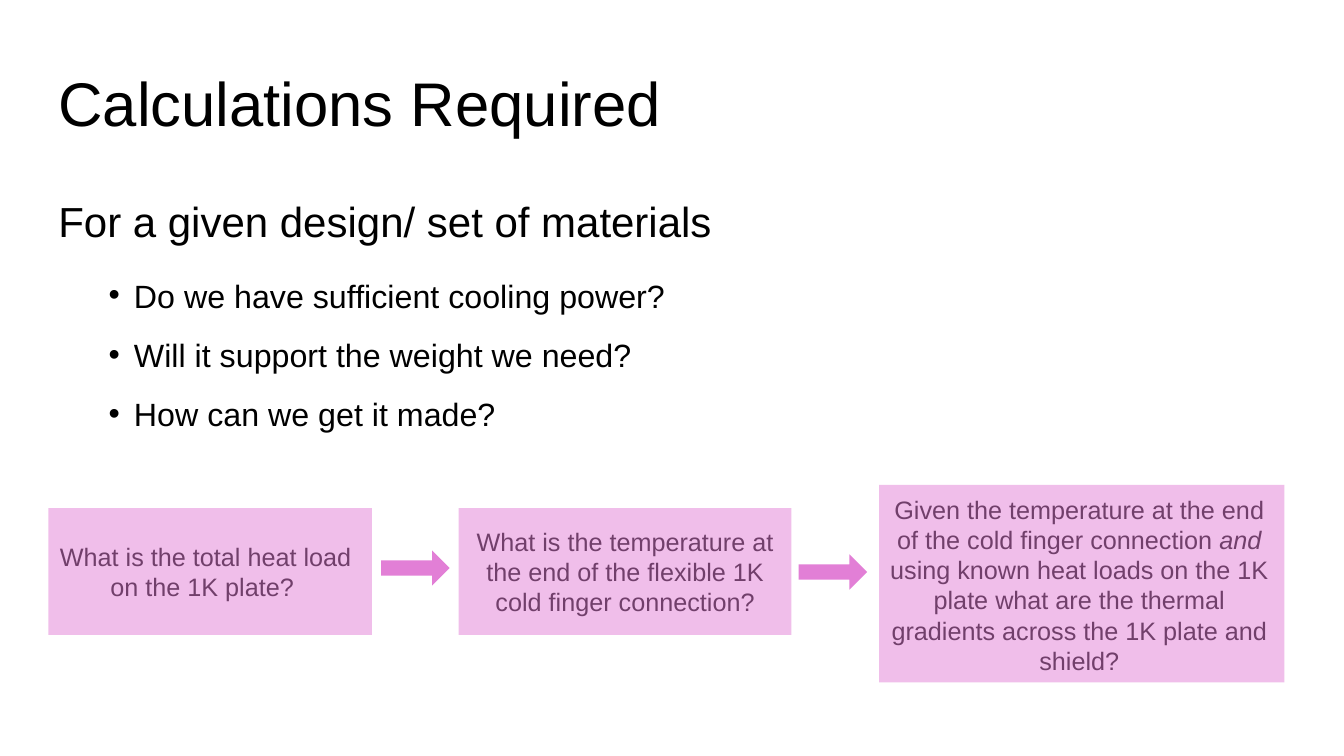
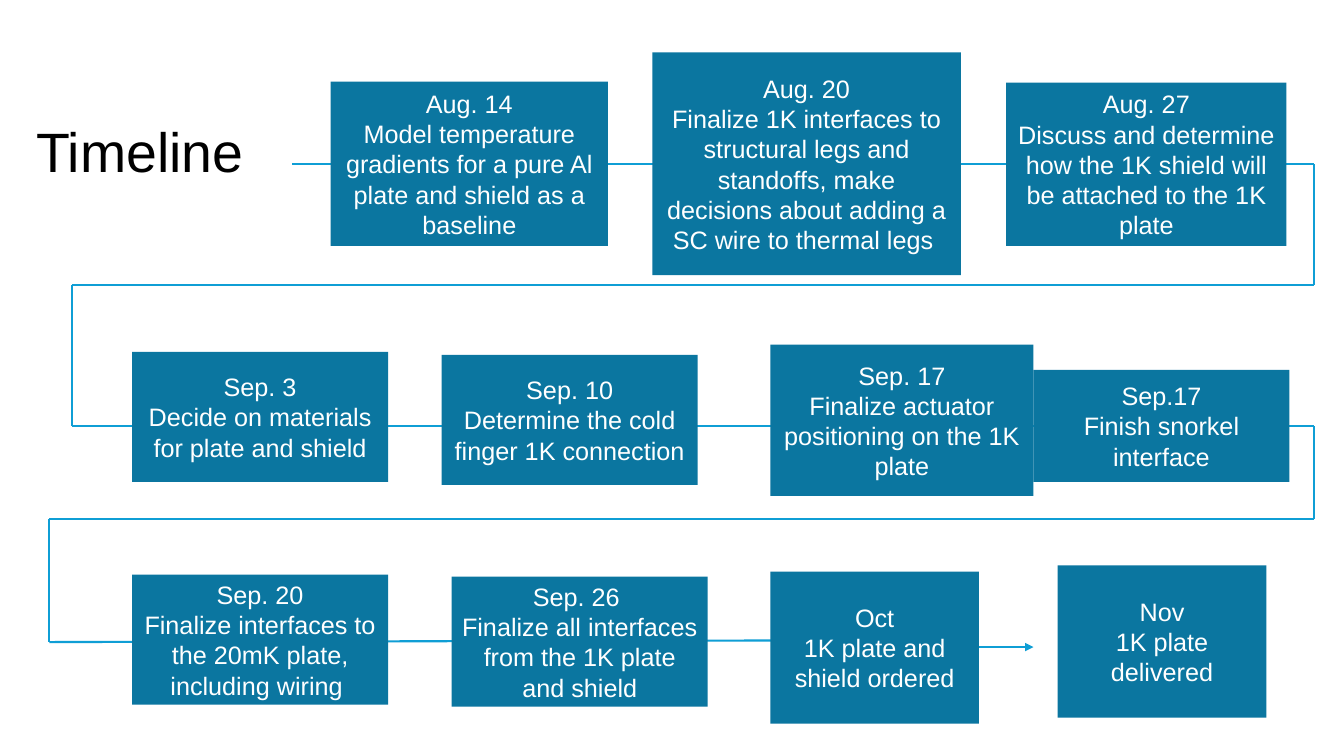
from dataclasses import dataclass
from itertools import pairwise

from lxml.etree import SubElement
from pptx import Presentation
from pptx.dml.color import RGBColor
from pptx.enum.shapes import MSO_CONNECTOR as Connector, MSO_SHAPE as Shape
from pptx.enum.text import MSO_ANCHOR as Anchor, PP_ALIGN as Align
from pptx.oxml.ns import qn
from pptx.util import Inches, Pt

FONT = "Arial"
BLACK, WHITE = "000000", "FFFFFF"
PINK, TEAL, SKY = "E27FD6", "0B76A0", "0F9ED5"
TEXT_SIZE = 18


@dataclass(frozen=True)
class Box:
    left: float
    top: float
    width: float
    height: float

    def lengths(self) -> list:
        return [Inches(n) for n in (self.left, self.top, self.width, self.height)]


@dataclass(frozen=True)
class Question:
    panel: Box
    text_box: Box
    spans: tuple[str, ...]  # every second span is italic


@dataclass(frozen=True)
class Milestone:
    box: Box
    date: str
    task: str


QUESTIONS = (
    Question(Box(0.48, 5.04, 3.21, 1.26), Box(0.39, 5.32, 3.3, 0.71),
             ("What is the total heat load on the 1K plate? ",)),
    Question(Box(4.55, 5.04, 3.3, 1.26), Box(4.55, 5.17, 3.3, 1.01),
             ("What is the temperature at the end of the flexible 1K "
              "cold finger connection?",)),
    Question(Box(8.72, 4.81, 4.02, 1.96), Box(8.72, 4.85, 3.97, 1.92),
             ("Given the temperature at the end of the cold finger connection ",
              "and",
              " using known heat loads on the 1K plate what are the thermal "
              "gradients across the 1K plate and shield?")),
)
ARROWS = (Box(3.78, 5.46, 0.68, 0.35), Box(7.92, 5.5, 0.68, 0.35))

BULLETS = (
    "Do we have sufficient cooling power?",
    "Will it support the weight we need?",
    "How can we get it made?",
)

MILESTONES = (
    Milestone(Box(3.28, 0.81, 2.75, 1.63), "Aug. 14",
              "Model temperature gradients for a pure Al plate and shield as a baseline"),
    Milestone(Box(6.47, 0.52, 3.06, 2.21), "Aug. 20",
              "Finalize 1K interfaces to structural legs and standoffs, make "
              "decisions about adding a SC wire to thermal legs "),
    Milestone(Box(9.98, 0.82, 2.78, 1.62), "Aug. 27",
              "Discuss and determine how the 1K shield will be attached to the 1K plate"),
    Milestone(Box(1.31, 3.49, 2.54, 1.29), "Sep. 3",
              "Decide on materials for plate and shield"),
    Milestone(Box(4.38, 3.52, 2.54, 1.29), "Sep. 10",
              "Determine the cold finger 1K connection"),
    Milestone(Box(7.64, 3.42, 2.61, 1.5), "Sep. 17",
              "Finalize actuator positioning on the 1K plate"),
    Milestone(Box(10.25, 3.67, 2.54, 1.11), "Sep.17", "Finish snorkel interface"),
    Milestone(Box(1.31, 5.7, 2.54, 1.29), "Sep. 20",
              "Finalize interfaces to the 20mK plate, including wiring "),
    Milestone(Box(4.48, 5.72, 2.54, 1.29), "Sep. 26 ",
              "Finalize all interfaces from the 1K plate and shield"),
    Milestone(Box(7.64, 5.67, 2.07, 1.51), "Oct", "1K plate and shield ordered"),
    Milestone(Box(10.49, 5.61, 2.07, 1.51), "Nov", "1K plate delivered"),
)
ROUTE = (
    (2.9, 1.63), (13.03, 1.63), (13.03, 2.83), (0.71, 2.83), (0.71, 4.23),
    (13.03, 4.23), (13.03, 5.15), (0.49, 5.15), (0.49, 6.37), (9.53, 6.35),
)
DELIVERY = ((9.71, 6.42), (10.25, 6.42))


def rgb(color: str) -> RGBColor:
    return RGBColor.from_string(color)


def set_values(target, values: dict) -> None:
    for name, value in values.items():
        setattr(target, name, value)


def add_span(para, text: str, size: float = TEXT_SIZE, color: str = BLACK, **font) -> None:
    span = para.add_run()
    span.text = text
    set_values(span.font, {"name": FONT, "size": Pt(size), **font})
    span.font.color.rgb = rgb(color)


def add_text_box(page, box: Box, **frame_values):
    """Add a wrapping text box and return its text frame."""
    frame = page.shapes.add_textbox(*box.lengths()).text_frame
    set_values(frame, {"word_wrap": True, **frame_values})
    return frame


def add_title(page, box: Box, text: str, size: float) -> None:
    para = add_text_box(page, box, vertical_anchor=Anchor.MIDDLE).paragraphs[0]
    para.line_spacing = 0.9
    add_span(para, text, size)


def add_block(page, kind: Shape, box: Box, color: str):
    """Add a flat filled shape without outline."""
    block = page.shapes.add_shape(kind, *box.lengths())
    block.shadow.inherit = False
    block.fill.solid()
    block.fill.fore_color.rgb = rgb(color)
    block.line.fill.background()
    return block


def set_opacity(block, percent: int) -> None:
    color = block._element.spPr.find(qn("a:solidFill"))[0]
    SubElement(color, qn("a:alpha"), val=str(percent * 1000))


def add_line(page, start: tuple[float, float], end: tuple[float, float],
             arrow: bool = False) -> None:
    ends = [Inches(n) for n in (*start, *end)]
    connector = page.shapes.add_connector(Connector.STRAIGHT, *ends)
    connector.line.color.rgb = rgb(SKY)
    connector.line.width = Pt(1.5)
    props = connector._element.spPr
    if arrow:
        SubElement(props.find(qn("a:ln")), qn("a:tailEnd"), type="triangle")
    SubElement(props, qn("a:effectLst"))


def add_bullet(para) -> None:
    props = para._p.get_or_add_pPr()
    props.set("marL", str(Inches(0.75)))
    props.set("indent", str(Inches(-0.25)))
    SubElement(props, qn("a:buFont"), typeface=FONT)
    SubElement(props, qn("a:buChar"), char="•")


def add_outline(page) -> None:
    """Add the heading with its bulleted questions."""
    frame = add_text_box(page, Box(0.48, 1.55, 7.08, 3.38), margin_top=Inches(0.53))
    heading = frame.paragraphs[0]
    heading.line_spacing = 0.7
    add_span(heading, "For a given design/ set of materials", 30)
    for index, text in enumerate(BULLETS):
        para = frame.add_paragraph()
        set_values(para, {"level": 1, "line_spacing": 0.7,
                          "space_before": Pt(23 if index else 30)})
        add_bullet(para)
        add_span(para, text, 23)


def add_question(page, question: Question) -> None:
    para = add_text_box(page, question.text_box).paragraphs[0]
    para.alignment = Align.CENTER
    for index, text in enumerate(question.spans):
        add_span(para, text, italic=index % 2 == 1)
    set_opacity(add_block(page, Shape.RECTANGLE, question.panel, PINK), 50)


def add_milestone(page, milestone: Milestone) -> None:
    frame = add_block(page, Shape.RECTANGLE, milestone.box, TEAL).text_frame
    set_values(frame, {"word_wrap": True, "vertical_anchor": Anchor.MIDDLE})
    for para, text in ((frame.paragraphs[0], milestone.date),
                       (frame.add_paragraph(), milestone.task)):
        para.alignment = Align.CENTER
        add_span(para, text, color=WHITE)


def build_calculations(page) -> None:
    add_title(page, Box(0.48, 0.58, 7.08, 0.96), "Calculations Required", 44)
    add_outline(page)
    for question in QUESTIONS:
        add_question(page, question)
    for box in ARROWS:
        arrow = add_block(page, Shape.RIGHT_ARROW, box, PINK)
        arrow.adjustments[0] = 0.43


def build_timeline(page) -> None:
    for start, end in pairwise(ROUTE):
        add_line(page, start, end)
    add_line(page, *DELIVERY, arrow=True)
    add_title(page, Box(0.26, 1.15, 2.51, 0.77), "Timeline", 39.6)
    for milestone in MILESTONES:
        add_milestone(page, milestone)


def main() -> None:
    deck = Presentation()
    set_values(deck, {"slide_width": Inches(13.33), "slide_height": Inches(7.5)})
    blank = deck.slide_layouts[6]
    for build in (build_calculations, build_timeline):
        build(deck.slides.add_slide(blank))
    deck.save("out.pptx")


if __name__ == "__main__":
    main()
